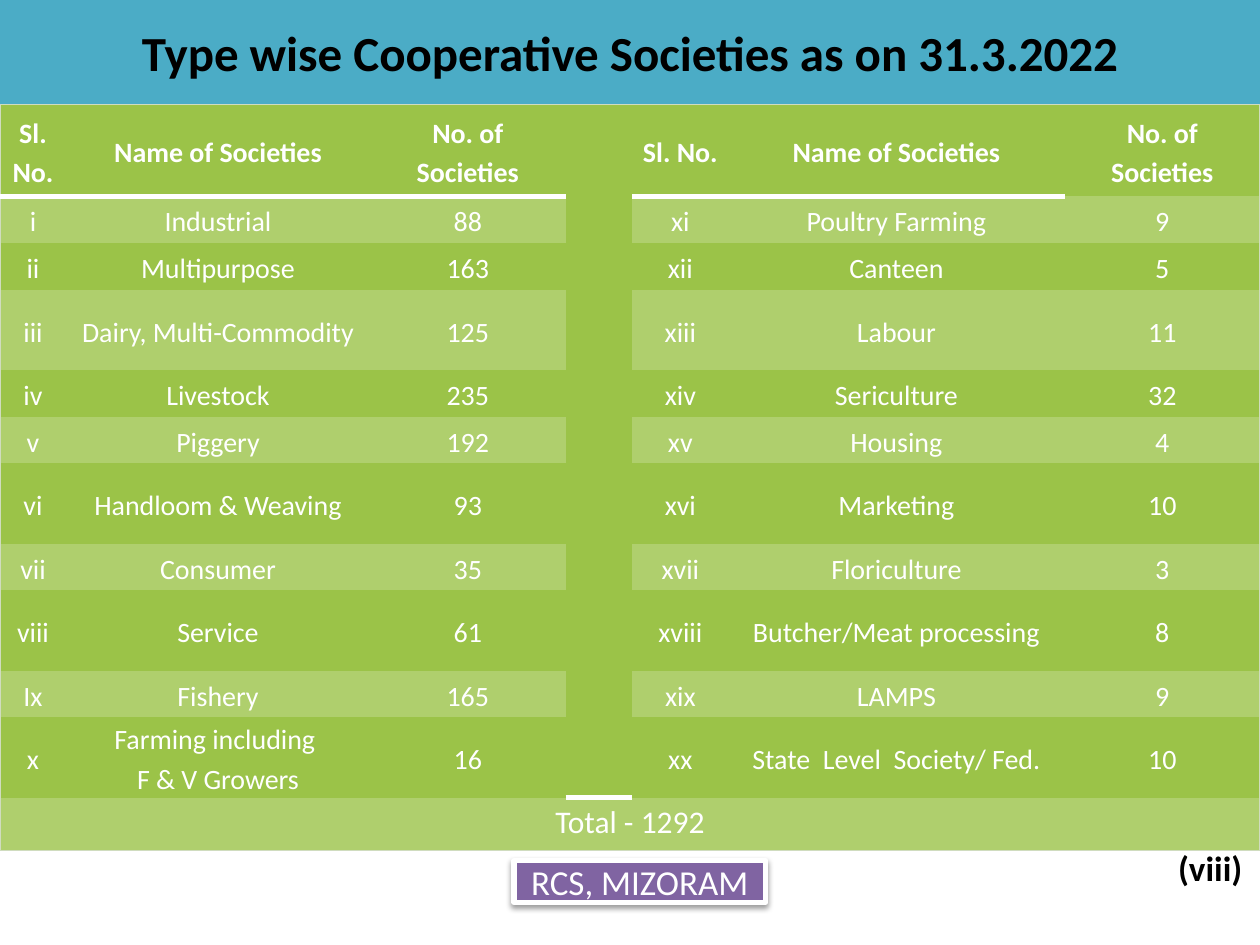
from dataclasses import dataclass

from lxml import etree
from pptx import Presentation
from pptx.dml.color import RGBColor
from pptx.enum.shapes import MSO_SHAPE
from pptx.enum.text import MSO_ANCHOR, MSO_AUTO_SIZE, PP_ALIGN
from pptx.oxml.ns import qn
from pptx.util import Cm, Pt

MIDDLE = MSO_ANCHOR.MIDDLE
CENTER, LEFT = PP_ALIGN.CENTER, PP_ALIGN.LEFT
RECT = MSO_SHAPE.RECTANGLE
GROW = MSO_AUTO_SIZE.SHAPE_TO_FIT_TEXT
PLAIN_STYLE = "{2D5ABB26-0587-4C30-8999-92F81FD0307C}"


@dataclass(frozen=True)
class Theme:
    font: str = "Calibri"
    banner: str = "4BACC6"
    green: str = "9BC348"
    band: str = "AFCF6D"
    edge: str = "D0DCBF"
    badge: str = "8064A2"
    white: str = "FFFFFF"
    black: str = "000000"
    title: int = 28
    cell: int = 16
    total: int = 18
    label: int = 20


THEME = Theme()

HEADS = ["Sl. No.", "Name of Societies", "No. of Societies"]
LEFT_SIDE = [
    ("i", "Industrial", 88),
    ("ii", "Multipurpose", 163),
    ("iii", "Dairy, Multi-Commodity", 125),
    ("iv", "Livestock", 235),
    ("v", "Piggery", 192),
    ("vi", "Handloom & Weaving", 93),
    ("vii", "Consumer", 35),
    ("viii", "Service", 61),
    ("Ix", "Fishery", 165),
    ("x", "Farming including \nF & V Growers", 16),
]
RIGHT_SIDE = [
    ("xi", "Poultry Farming", 9),
    ("xii", "Canteen", 5),
    ("xiii", "Labour", 11),
    ("xiv", "Sericulture", 32),
    ("xv", "Housing", 4),
    ("xvi", "Marketing", 10),
    ("xvii", "Floriculture", 3),
    ("xviii", "Butcher/Meat processing", 8),
    ("xix", "LAMPS", 9),
    ("xx", "State  Level  Society/ Fed.", 10),
]
WIDTHS = [1.33, 6.13, 3.94, 1.35, 1.93, 6.78, 3.94]
SHORT, TALL = 0.94, 1.62
HEIGHTS = [1.85, SHORT, SHORT, TALL, SHORT, SHORT, TALL, SHORT, TALL, SHORT, TALL, 1.07]
GAP = 3
LAST_COL = len(WIDTHS) - 1
LAST_ROW = len(HEIGHTS) - 1


def paint(fill, color):
    fill.solid()
    fill.fore_color.rgb = RGBColor.from_string(color)


def write(frame, text, size, color, bold=False, align=CENTER, space=None):
    frame.text = text
    for para in frame.paragraphs:
        para.alignment = align
        if space:
            para.line_spacing = space
        font = para.font
        font.name, font.size, font.bold = THEME.font, Pt(size), bold
        font.color.rgb = RGBColor.from_string(color)


def add_color(parent, color):
    return etree.SubElement(parent, qn("a:srgbClr"), val=color)


def rule(cell, side, color, width):
    """Draw one cell border; sides of a cell must come in the order L, R, T, B."""
    props = cell._tc.get_or_add_tcPr()
    line = etree.Element(qn(f"a:ln{side}"), w=str(Pt(width)))
    add_color(etree.SubElement(line, qn("a:solidFill")), color)
    props.insert(len(props.findall("*")) - 1, line)  # before the fill


def add_title(slide, box):
    title = slide.shapes.title
    title.left, title.top, title.width, title.height = map(Cm, box)
    paint(title.fill, THEME.banner)
    title.text_frame.vertical_anchor = MIDDLE
    write(title.text_frame, "Type wise Cooperative Societies as on 31.3.2022",
          THEME.title, THEME.black, bold=True)


def edge_cell(cell, row, col):
    if col == 0:
        rule(cell, "L", THEME.edge, 0.75)
    if col == LAST_COL or row == LAST_ROW:
        rule(cell, "R", THEME.edge, 0.75)
    if row == 0:
        rule(cell, "T", THEME.edge, 0.75)
        if col < LAST_COL:
            rule(cell, "B", THEME.white, 3)
    if row == LAST_ROW:
        rule(cell, "B", THEME.edge, 0.75)


def add_grid(slide, box):
    frame = slide.shapes.add_table(len(HEIGHTS), len(WIDTHS), *map(Cm, box))
    table = frame.table
    table._tbl.tblPr.find(qn("a:tableStyleId")).text = PLAIN_STYLE
    for column, width in zip(table.columns, WIDTHS):
        column.width = Cm(width)
    for line, height in zip(table.rows, HEIGHTS):
        line.height = Cm(height)
    table.cell(0, GAP).merge(table.cell(LAST_ROW - 1, GAP))
    table.cell(LAST_ROW, 0).merge(table.cell(LAST_ROW, LAST_COL))

    rows = [[*HEADS, "", *HEADS]]
    rows += [[*a, "", *b] for a, b in zip(LEFT_SIDE, RIGHT_SIDE)]
    for r, values in enumerate(rows):
        for c, value in enumerate(values):
            cell = table.cell(r, c)
            if cell.is_spanned:
                continue
            banded = r % 2 == 1 and c != GAP
            paint(cell.fill, THEME.band if banded else THEME.green)
            edge_cell(cell, r, c)
            if c == GAP:
                continue
            cell.vertical_anchor = MIDDLE
            cell.margin_left = cell.margin_right = Cm(0.18)
            cell.margin_top = cell.margin_bottom = 0
            write(cell.text_frame, str(value), THEME.cell, THEME.white,
                  bold=r == 0, space=1.15)

    total = table.cell(LAST_ROW, 0)
    paint(total.fill, THEME.band)
    edge_cell(total, LAST_ROW, 0)
    write(total.text_frame, "Total - 1292", THEME.total, THEME.white)


def add_badge(slide, box):
    badge = slide.shapes.add_shape(RECT, *map(Cm, box))
    paint(badge.fill, THEME.badge)
    paint(badge.line.fill, THEME.white)
    badge.line.width = Pt(3)
    badge.shadow.inherit = False
    shadow = etree.SubElement(
        badge._element.spPr.find(qn("a:effectLst")), qn("a:outerShdw"),
        blurRad="40000", dist="20000", dir="5400000", rotWithShape="0")
    etree.SubElement(add_color(shadow, THEME.black), qn("a:alpha"), val="38000")
    badge.text_frame.vertical_anchor = MIDDLE
    write(badge.text_frame, "RCS, MIZORAM", THEME.label, THEME.white)


def add_folio(slide, box):
    """Place the page mark."""
    frame = slide.shapes.add_textbox(*map(Cm, box)).text_frame
    frame.word_wrap = True
    frame.auto_size = GROW
    write(frame, "(viii)", THEME.label, THEME.black, bold=True, align=LEFT)


def main():
    deck = Presentation()
    deck.slide_width, deck.slide_height = Cm(25.4), Cm(19.05)
    slide = deck.slides.add_slide(deck.slide_layouts[5])
    add_title(slide, (0, 0, 25.4, 2.11))
    add_grid(slide, (0, 2.11, 25.4, sum(HEIGHTS)))
    add_badge(slide, (10.36, 17.35, 5.08, 0.84))
    add_folio(slide, (23.5, 16.94, 1.9, 1.12))
    deck.save("out.pptx")


if __name__ == "__main__":
    main()
